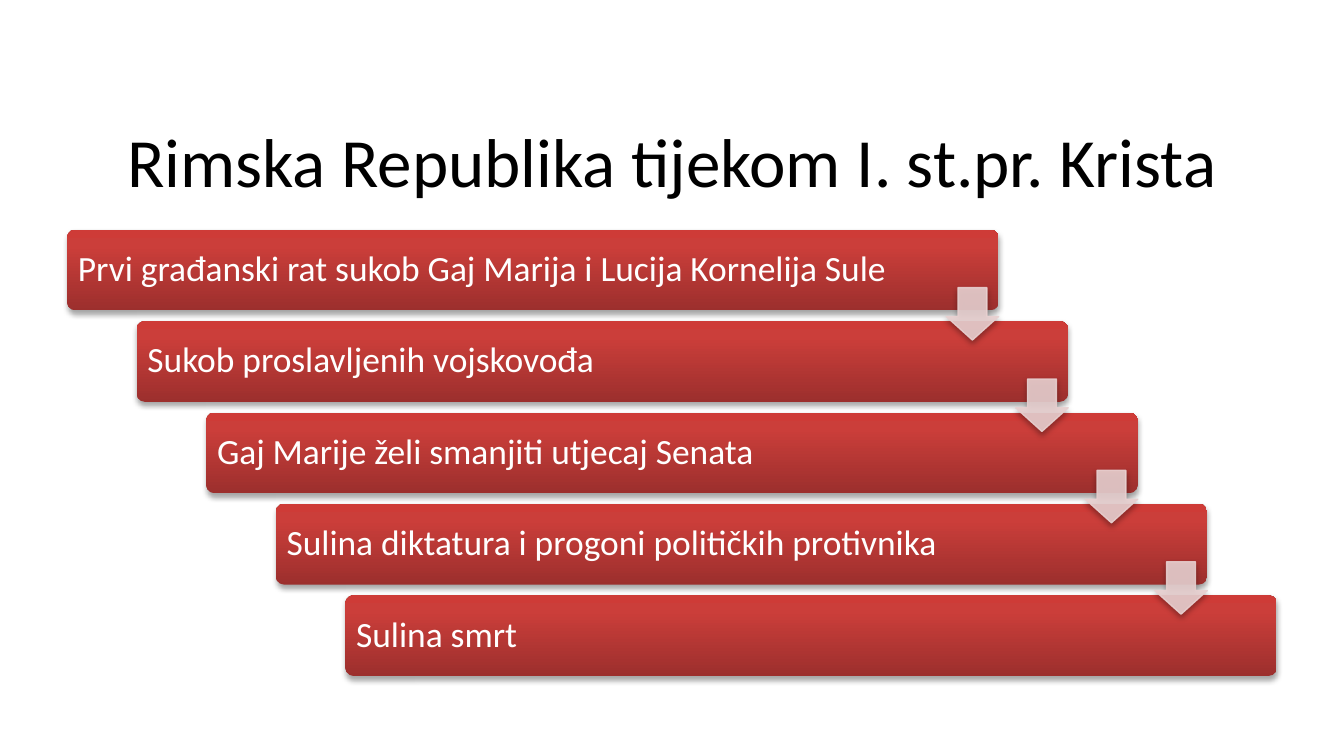
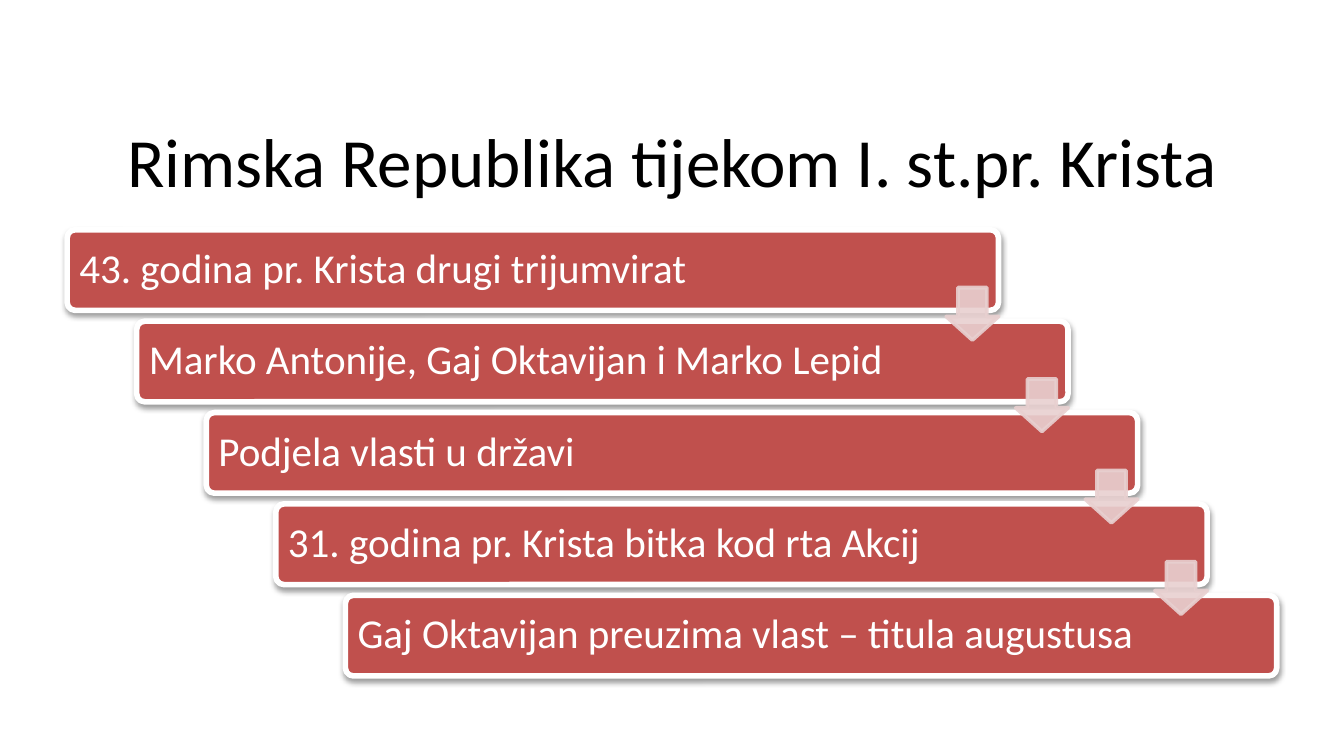
from copy import deepcopy

from lxml import etree
from pptx import Presentation
from pptx.dml.color import RGBColor
from pptx.enum.shapes import MSO_SHAPE
from pptx.enum.text import MSO_ANCHOR, MSO_AUTO_SIZE, PP_ALIGN
from pptx.oxml.ns import qn
from pptx.util import Inches, Pt

ROUNDED = MSO_SHAPE.ROUNDED_RECTANGLE
DOWN_ARROW = MSO_SHAPE.DOWN_ARROW
MIDDLE = MSO_ANCHOR.MIDDLE
LEFT, CENTER = PP_ALIGN.LEFT, PP_ALIGN.CENTER
NO_AUTOFIT = MSO_AUTO_SIZE.NONE
TITLE_ONLY = 5

# Shared look
SLIDE_WIDTH = 10
SLIDE_HEIGHT = SLIDE_WIDTH * 9 / 16
FONT = "Calibri"
BLACK, WHITE, RED, PINK = "000000", "FFFFFF", "C0504D", "E8D0D0"
RED_GRADIENT = [(0, "9C2F2D"), (0.8, "CB3E3A"), (1, "CE3B37")]
TITLE = "Rimska Republika tijekom I. st.pr. Krista"

# Staircase geometry in inches
BAR_LEFT, BAR_TOP, BAR_WIDTH, BAR_HEIGHT = 0.5, 1.71, 6.93, 0.6
LAST_BAR_LEFT = 2.57
STEP_DOWN = 0.68
ARROW_LEFT, ARROW_TOP, ARROW_SIZE = 7.04, 2.14, 0.39
FIRST_LABEL_WIDTH, LABEL_WIDTH = 6.25, 6.02

# Each slide: the style of its staircase and the steps
GLOSSY = {"fill": RED_GRADIENT, "outline": 0, "size": 19, "inset": 0.08,
          "shadow": (35, 1.8), "arrow_line": 0.75, "arrow_shadow": True}
FRAMED = {"fill": RED, "outline": 3, "size": 22, "inset": 0.09,
          "shadow": (38, 1.6), "arrow_line": 2, "arrow_shadow": False}
SLIDES = [
    (GLOSSY, [
        "Prvi građanski rat sukob Gaj Marija i Lucija Kornelija Sule",
        "Sukob proslavljenih vojskovođa",
        "Gaj Marije želi smanjiti utjecaj Senata",
        "Sulina diktatura i progoni političkih protivnika",
        "Sulina smrt",
    ]),
    (FRAMED, [
        "43. godina pr. Krista drugi trijumvirat",
        "Marko Antonije, Gaj Oktavijan i Marko Lepid",
        "Podjela vlasti u državi",
        "31. godina pr. Krista bitka kod rta Akcij",
        "Gaj Oktavijan preuzima vlast – titula augustusa",
    ]),
]


def color(hex_value):
    return RGBColor.from_string(hex_value)


def add_alpha(color_element, percent):
    etree.SubElement(color_element, qn("a:alpha"), val=str(percent * 1000))


def set_gradient(shape, stops):
    """Fill from bottom to top with any number of stops."""
    shape.fill.gradient()
    shape.fill.gradient_angle = 90
    stop_list = shape._element.spPr.find(".//" + qn("a:gsLst"))
    while len(stop_list) < len(stops):
        stop_list.append(deepcopy(stop_list[0]))
    for stop, (position, hex_value) in zip(shape.fill.gradient_stops, stops):
        stop.position = position
        stop.color.rgb = color(hex_value)


def set_shadow(shape, opacity, distance):
    effects = shape._element.spPr.find(qn("a:effectLst"))
    shadow = etree.SubElement(effects, qn("a:outerShdw"), blurRad=str(Pt(3.1)),
                              dist=str(Pt(distance)), dir="5400000", rotWithShape="0")
    black = etree.SubElement(shadow, qn("a:srgbClr"), val=BLACK)
    add_alpha(black, opacity)


def write_text(frame, text, size, hex_value, alignment):
    frame.word_wrap = True
    frame.auto_size = NO_AUTOFIT
    frame.vertical_anchor = MIDDLE
    paragraph = frame.paragraphs[0]
    paragraph.alignment = alignment
    paragraph.line_spacing = 0.9
    run = paragraph.add_run()
    run.text = text
    run.font.name = FONT
    run.font.size = Pt(size)
    run.font.color.rgb = color(hex_value)


def add_title(slide):
    title = slide.shapes.title
    title.left, title.top = Inches(0.5), Inches(0.84)
    title.width, title.height = Inches(9), Inches(0.78)
    write_text(title.text_frame, TITLE, 37, BLACK, CENTER)


def add_bar(group, left, top, style):
    bar = group.shapes.add_shape(ROUNDED, Inches(left), Inches(top),
                                 Inches(BAR_WIDTH), Inches(BAR_HEIGHT))
    bar.adjustments[0] = 0.1
    bar.shadow.inherit = False
    if isinstance(style["fill"], list):
        set_gradient(bar, style["fill"])
    else:
        bar.fill.solid()
        bar.fill.fore_color.rgb = color(style["fill"])
    if style["outline"]:
        bar.line.color.rgb = color(WHITE)
        bar.line.width = Pt(style["outline"])
    else:
        bar.line.fill.background()
    set_shadow(bar, *style["shadow"])


def add_label(group, left, top, width, text, style):
    label = group.shapes.add_textbox(Inches(left), Inches(top),
                                     Inches(width), Inches(BAR_HEIGHT))
    frame = label.text_frame
    inset = Inches(style["inset"])
    frame.margin_left = frame.margin_right = inset
    frame.margin_top = frame.margin_bottom = inset
    write_text(frame, text, style["size"], WHITE, LEFT)


def add_arrow(group, left, top, style):
    arrow = group.shapes.add_shape(DOWN_ARROW, Inches(left), Inches(top),
                                   Inches(ARROW_SIZE), Inches(ARROW_SIZE))
    arrow.adjustments[0] = 0.55
    arrow.adjustments[1] = 0.45
    arrow.shadow.inherit = False
    arrow.fill.solid()
    arrow.fill.fore_color.rgb = color(PINK)
    arrow.line.color.rgb = color(PINK)
    arrow.line.width = Pt(style["arrow_line"])
    for color_element in arrow._element.spPr.iter(qn("a:srgbClr")):
        add_alpha(color_element, 90)
    if style["arrow_shadow"]:
        set_shadow(arrow, *style["shadow"])


def add_staircase(slide, steps, style):
    group = slide.shapes.add_group_shape()
    step_right = (LAST_BAR_LEFT - BAR_LEFT) / (len(steps) - 1)
    for index, text in enumerate(steps):
        left = BAR_LEFT + index * step_right
        top = BAR_TOP + index * STEP_DOWN
        width = LABEL_WIDTH if index else FIRST_LABEL_WIDTH
        add_bar(group, left, top, style)
        add_label(group, left, top, width, text, style)
    # One arrow between each pair of bars, above them all
    for index in range(len(steps) - 1):
        add_arrow(group, ARROW_LEFT + index * step_right,
                  ARROW_TOP + index * STEP_DOWN, style)


def main():
    presentation = Presentation()
    presentation.slide_width = Inches(SLIDE_WIDTH)
    presentation.slide_height = Inches(SLIDE_HEIGHT)
    for style, steps in SLIDES:
        slide = presentation.slides.add_slide(presentation.slide_layouts[TITLE_ONLY])
        add_title(slide)
        add_staircase(slide, steps, style)
    presentation.save("out.pptx")


if __name__ == "__main__":
    main()
